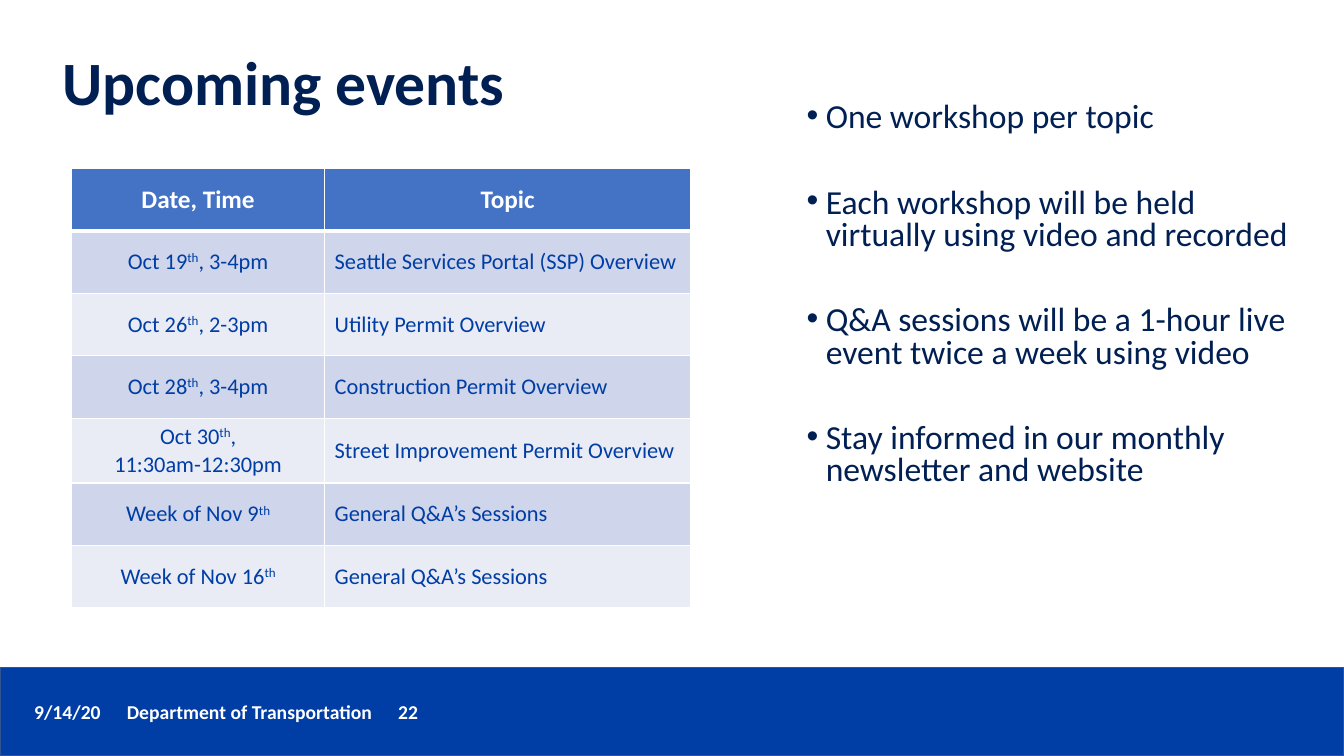
"""Build the upcoming events slide with its schedule table and notes list."""
import dataclasses
import pptx
import pptx.util
import pptx.dml.color
import pptx.enum.shapes
import pptx.enum.text
import pptx.oxml
import pptx.oxml.ns

Inches = pptx.util.Inches
Pt = pptx.util.Pt
Align = pptx.enum.text.PP_ALIGN
Anchor = pptx.enum.text.MSO_ANCHOR
NS = pptx.oxml.ns.nsdecls("a")

TITLE = "Upcoming events"
HEAD = ("Date, Time", "Topic")
EVENTS = [
    ("Oct 19^th^, 3-4pm", "Seattle Services Portal (SSP) Overview"),
    ("Oct 26^th^, 2-3pm", "Utility Permit Overview"),
    ("Oct 28^th^, 3-4pm", "Construction Permit Overview"),
    ("Oct 30^th^, 11:30am-12:30pm", "Street Improvement Permit Overview"),
    ("Week of Nov 9^th^", "General Q&A’s Sessions"),
    ("Week of Nov 16^th^", "General Q&A’s Sessions"),
]
POINTS = [
    "One workshop per topic",
    "Each workshop will be held virtually using video and recorded",
    "Q&A sessions will be a 1-hour live event twice a week using video",
    "Stay informed in our monthly newsletter and website",
]
FOOTER = ("9/14/20", "Department of Transportation", "22")
TABS = (0.92, 3.61)
COLS = (2.51, 3.63)
ROW = 0.62


@dataclasses.dataclass(frozen=True)
class Theme:
    """Hold the colours, font and type sizes."""
    font: str = "Calibri"
    navy: str = "001F52"
    blue: str = "003DA5"
    edge: str = "31538F"
    white: str = "FFFFFF"
    head: str = "4472C4"
    bands: tuple = ("CFD5EA", "E9EBF5")
    title: int = 44
    list: int = 24
    label: int = 18
    cell: int = 16
    foot: int = 14


THEME = Theme()


def rgb(code):
    """Turn a hex code into a colour."""
    return pptx.dml.color.RGBColor.from_string(code)


def place(shape, left, top, width, height):
    """Move and size a shape in inches."""
    shape.left, shape.top = Inches(left), Inches(top)
    shape.width, shape.height = Inches(width), Inches(height)


def write(frame, lines, size, color, bold=False, align=Align.LEFT,
          anchor=Anchor.TOP, lead=None, gap=0, bullet=None, tabs=()):
    """Fill a frame with lines, raising the text between carets."""
    frame.word_wrap = True
    frame.vertical_anchor = anchor
    for i, line in enumerate(lines):
        para = frame.paragraphs[0] if i == 0 else frame.add_paragraph()
        props = para._p.get_or_add_pPr()
        if bullet:
            props.set("marL", str(Inches(0.19)))
            props.set("indent", str(-Inches(0.19)))
            props.append(pptx.oxml.parse_xml(f'<a:buChar {NS} char="{bullet}"/>'))
        if tabs:
            stops = "".join(f'<a:tab pos="{Inches(t)}" algn="l"/>' for t in tabs)
            props.append(pptx.oxml.parse_xml(f"<a:tabLst {NS}>{stops}</a:tabLst>"))
        para.alignment = align
        para.space_before = Pt(gap if i else 0)
        if lead:
            para.line_spacing = lead
        for j, part in enumerate(line.split("^")):
            if not part:
                continue
            run = para.add_run()
            run.text = part
            font = run.font
            font.name, font.size, font.bold = THEME.font, Pt(size), bold
            font.color.rgb = rgb(color)
            if j % 2:
                run._r.get_or_add_rPr().set("baseline", "30000")


def border(cell, top, bottom):
    """Give a cell white edges of the stated widths."""
    props = cell._tc.get_or_add_tcPr()
    for side, width in zip("LRTB", (1, 1, top, bottom)):
        props.append(pptx.oxml.parse_xml(
            f'<a:ln{side} {NS} w="{Pt(width)}"><a:solidFill>'
            f'<a:srgbClr val="{THEME.white}"/></a:solidFill></a:ln{side}>'))


def schedule(slide):
    """Add the table of dates and topics."""
    rows = [HEAD] + EVENTS
    table = slide.shapes.add_table(
        len(rows), len(COLS), Inches(0.71), Inches(1.67),
        Inches(sum(COLS)), Inches(ROW * len(rows))).table
    for col, width in zip(table.columns, COLS):
        col.width = Inches(width)
    for r, row in enumerate(rows):
        table.rows[r].height = Inches(ROW)
        for c, text in enumerate(row):
            cell = table.cell(r, c)
            border(cell, 3 if r == 1 else 1, 3 if r == 0 else 1)
            cell.fill.solid()
            cell.fill.fore_color.rgb = rgb(THEME.bands[(r - 1) % 2] if r else THEME.head)
            cell.vertical_anchor = Anchor.MIDDLE
            write(cell.text_frame, [text],
                  THEME.cell if r else THEME.label,
                  THEME.blue if r else THEME.white,
                  bold=r == 0, anchor=None,
                  align=Align.LEFT if r and c else Align.CENTER)


def footer(slide):
    """Add the blue band and its line of text."""
    band = slide.shapes.add_shape(
        pptx.enum.shapes.MSO_SHAPE.RECTANGLE,
        0, Inches(6.62), Inches(13.33), Inches(0.88))
    band.shadow.inherit = False
    band.fill.solid()
    band.fill.fore_color.rgb = rgb(THEME.blue)
    band.line.color.rgb = rgb(THEME.edge)
    band.line.width = Pt(1)
    box = slide.shapes.add_textbox(
        Inches(0.24), Inches(6.89), Inches(10.06), Inches(0.34))
    write(box.text_frame, ["\t".join(FOOTER)], THEME.foot, THEME.white,
          bold=True, tabs=TABS)


def main():
    """Build and save the slide."""
    deck = pptx.Presentation()
    deck.slide_width, deck.slide_height = Inches(13.33), Inches(7.5)
    slide = deck.slides.add_slide(deck.slide_layouts[1])
    title, body = slide.shapes.title, slide.placeholders[1]
    place(title, 0.52, 0.12, 11.5, 1.45)
    place(body, 7.9, 0.97, 5.15, 4.33)
    for shape in (title, body):
        shape.text_frame.auto_size = pptx.enum.text.MSO_AUTO_SIZE.NONE
    write(title.text_frame, [TITLE], THEME.title, THEME.navy, bold=True,
          anchor=Anchor.MIDDLE, lead=0.9)
    write(body.text_frame, POINTS, THEME.list, THEME.navy,
          lead=0.8, gap=38, bullet="•")
    schedule(slide)
    footer(slide)
    deck.save("out.pptx")


if __name__ == "__main__":
    main()
